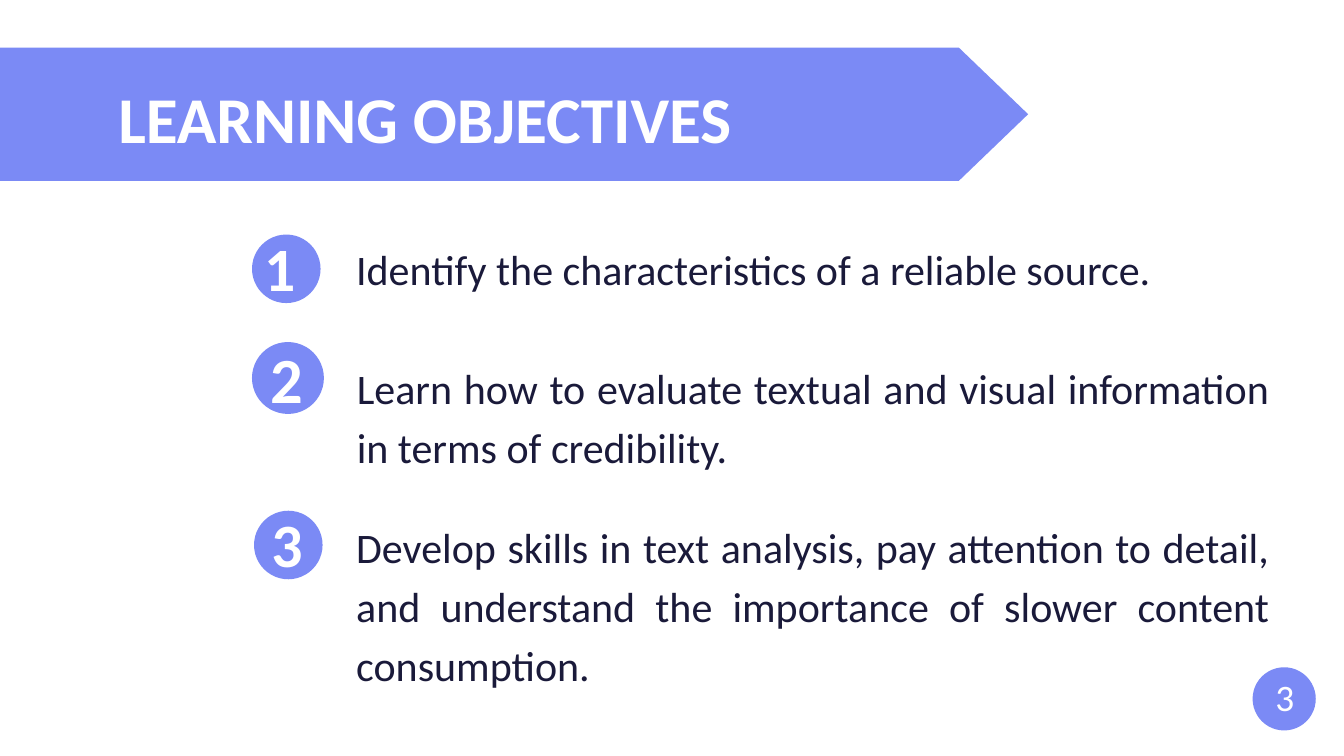
from pptx import Presentation
from pptx.dml.color import RGBColor
from pptx.enum.shapes import MSO_SHAPE
from pptx.enum.text import MSO_ANCHOR, MSO_AUTO_SIZE, PP_ALIGN
from pptx.util import Inches, Pt

BLUE = RGBColor(0x7B, 0x8A, 0xF5)
NAVY = RGBColor(0x1A, 0x1A, 0x3A)
WHITE = RGBColor(0xFF, 0xFF, 0xFF)

# Each objective: badge box, digit box with size, text box with line spacing
GOALS = [
    ("Identify the characteristics of a reliable source.",
     (3.75, 3.49, 1.02), (3.93, 3.42, 66), (5.3, 3.63, 13.03, 0.76), 1.0),
    ("Learn how to evaluate textual and visual information "
     "in terms of credibility.",
     (3.75, 5.09, 1.07), (4.02, 5.05, 69), (5.31, 5.27, 13.58, 1.68), 1.17),
    ("Develop skills in text analysis, pay attention to detail, "
     "and understand the importance of slower content consumption.",
     (3.78, 7.6, 1.02), (4.04, 7.53, 66), (5.3, 7.63, 13.59, 2.64), 1.17),
]


def assign(item, values):
    for name, value in values.items():
        setattr(item, name, value)


def write(shape, text, size, color, bold=False, align=PP_ALIGN.LEFT,
          lines=1.0, wrap=True):
    """Fill a text shape with one unpadded, top-anchored paragraph."""
    frame = shape.text_frame
    assign(frame, {
        "text": text, "word_wrap": wrap, "auto_size": MSO_AUTO_SIZE.NONE,
        "vertical_anchor": MSO_ANCHOR.TOP, "margin_left": 0,
        "margin_right": 0, "margin_top": 0, "margin_bottom": 0,
    })
    para = frame.paragraphs[0]
    assign(para, {"alignment": align, "line_spacing": lines,
                  "space_before": Pt(1)})
    font = para.runs[0].font
    assign(font, {"name": "Calibri", "size": Pt(size), "bold": bold})
    font.color.rgb = color


def add_text(slide, box, text, size, color, **style):
    shape = slide.shapes.add_textbox(*map(Inches, box))
    write(shape, text, size, color, **style)


def add_block(slide, kind, box):
    shape = slide.shapes.add_shape(kind, *map(Inches, box))
    shape.shadow.inherit = False
    shape.fill.solid()
    shape.fill.fore_color.rgb = BLUE
    shape.line.fill.background()
    return shape


def add_disc(slide, left, top, size):
    add_block(slide, MSO_SHAPE.OVAL, (left, top, size, size))


def add_title(slide, text):
    # Banner goes behind the title placeholder
    banner = add_block(slide, MSO_SHAPE.PENTAGON, (0, 0.71, 15.3, 1.98))
    banner.adjustments[0] = 0.52
    title = slide.shapes.title
    title.element.addprevious(banner.element)
    assign(title, {"left": Inches(1.76), "top": Inches(1.16),
                   "width": Inches(11.91), "height": Inches(1.19)})
    write(title, text, 70, WHITE, bold=True)


def add_goal(slide, number, goal):
    text, disc, (left, top, size), box, lines = goal
    add_disc(slide, *disc)
    add_text(slide, (left, top, 0.55, 1.12), str(number), size, WHITE,
             bold=True, wrap=False)
    add_text(slide, box, text, 45, NAVY, align=PP_ALIGN.JUSTIFY, lines=lines)


def main():
    deck = Presentation()
    assign(deck, {"slide_width": Inches(20), "slide_height": Inches(11.25)})
    slide = deck.slides.add_slide(deck.slide_layouts.get_by_name("Title Only"))

    add_title(slide, "LEARNING OBJECTIVES")

    # Numbered objectives
    for number, goal in enumerate(GOALS, 1):
        add_goal(slide, number, goal)

    # Page number
    add_disc(slide, 18.64, 9.93, 0.94)
    add_text(slide, (18.98, 10.03, 0.5, 0.68), "3", 40, WHITE)

    deck.save("out.pptx")


if __name__ == "__main__":
    main()
